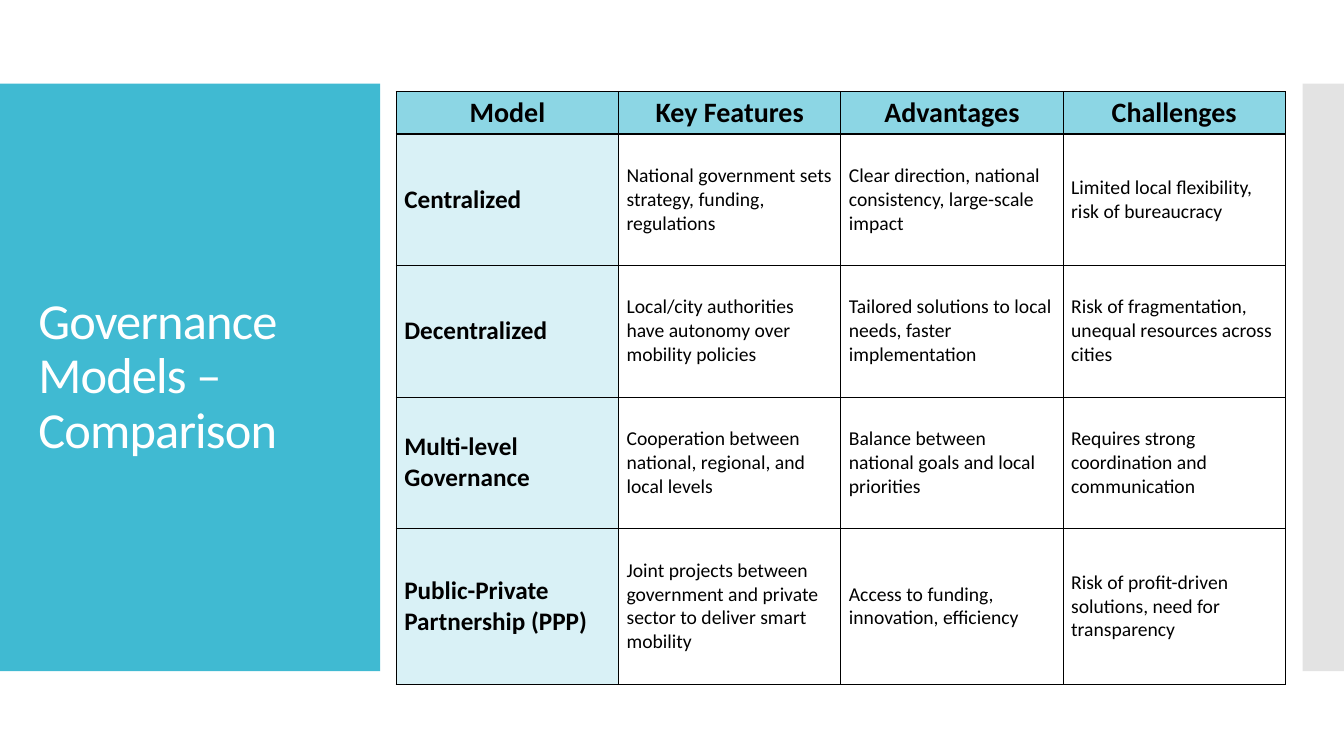
from lxml import etree
from pptx import Presentation
from pptx.dml.color import RGBColor
from pptx.enum.shapes import MSO_SHAPE
from pptx.enum.text import MSO_ANCHOR, MSO_AUTO_SIZE, PP_ALIGN
from pptx.oxml.ns import qn
from pptx.util import Inches, Pt

RECT = MSO_SHAPE.RECTANGLE
MIDDLE = MSO_ANCHOR.MIDDLE
NO_FIT = MSO_AUTO_SIZE.NONE
LEFT, CENTER = PP_ALIGN.LEFT, PP_ALIGN.CENTER

COLORS = {
    "panel": "40BAD2",
    "strip": "C8C8C8",
    "header": "8CD6E4",
    "model": "D9F1F6",
    "text": "000000",
    "border": "000000",
    "white": "FFFFFF",
}

HEADER = ["Model", "Key Features", "Advantages", "Challenges"]
MODELS = [
    ["Centralized",
     "National government sets strategy, funding, regulations",
     "Clear direction, national consistency, large-scale impact",
     "Limited local flexibility, risk of bureaucracy"],
    ["Decentralized",
     "Local/city authorities have autonomy over mobility policies",
     "Tailored solutions to local needs, faster implementation",
     "Risk of fragmentation, unequal resources across cities"],
    ["Multi-level Governance",
     "Cooperation between national, regional, and local levels",
     "Balance between national goals and local priorities",
     "Requires strong coordination and communication"],
    ["Public-Private Partnership (PPP)",
     "Joint projects between government and private sector to deliver smart mobility",
     "Access to funding, innovation, efficiency",
     "Risk of profit-driven solutions, need for transparency"],
]
ROW_HEIGHTS = [0.42, 1.3, 1.31, 1.3, 1.55]
TABLE_WIDTH = 8.82

# Cell looks: text size, weight, alignment and fill
HEADER_CELL = {"size": 20, "bold": True, "align": CENTER, "fill": "header"}
MODEL_CELL = {"size": 18, "bold": True, "align": LEFT, "fill": "model"}
BODY_CELL = {"size": 14, "bold": False, "align": LEFT, "fill": None}


def rgb(name):
    return RGBColor.from_string(COLORS[name])


def set_format(target, fmt):
    for key, value in fmt.items():
        setattr(target, key, value)


class SlideBuilder:
    def __init__(self, prs, font):
        self.font = font
        self.s = prs.slides.add_slide(prs.slide_layouts[5])

    def text(self, tf, text, size, color, align, bold=False):
        p = tf.paragraphs[0]
        p.alignment = align
        r = p.add_run()
        r.text = text
        set_format(r.font, {"name": self.font, "size": Pt(size), "bold": bold})
        r.font.color.rgb = rgb(color)
        return p, r

    def panel(self, box, color, alpha=None):
        sp = self.s.shapes.add_shape(RECT, *map(Inches, box))
        sp.shadow.inherit = False
        sp.line.fill.background()
        sp.fill.solid()
        sp.fill.fore_color.rgb = rgb(color)
        if alpha is not None:
            clr = sp.element.spPr.find(f"{qn('a:solidFill')}/{qn('a:srgbClr')}")
            etree.SubElement(clr, qn("a:alpha"), val=str(alpha * 1000))

    def title(self, box, text):
        sp = self.s.shapes.title
        # Bring the title in front of the panel
        sp.element.getparent().append(sp.element)
        sp.left, sp.top, sp.width, sp.height = map(Inches, box)
        tf = sp.text_frame
        set_format(tf, {"word_wrap": True, "auto_size": NO_FIT,
                        "vertical_anchor": MIDDLE})
        p, r = self.text(tf, text, 36, "white", LEFT)
        p.line_spacing = 0.9
        r._r.get_or_add_rPr().set("spc", "-60")

    def borders(self, cell):
        tcPr = cell._tc.get_or_add_tcPr()
        for side in ("a:lnL", "a:lnR", "a:lnT", "a:lnB"):
            ln = etree.SubElement(tcPr, qn(side), w=str(int(Pt(1))))
            fill = etree.SubElement(ln, qn("a:solidFill"))
            etree.SubElement(fill, qn("a:srgbClr"), val=COLORS["border"])

    def cell(self, cell, text, look):
        set_format(cell, {
            "vertical_anchor": MIDDLE,
            "margin_left": Inches(0.08), "margin_right": Inches(0.08),
            "margin_top": Inches(0.04), "margin_bottom": Inches(0.04),
        })
        self.borders(cell)
        if look["fill"]:
            cell.fill.solid()
            cell.fill.fore_color.rgb = rgb(look["fill"])
        else:
            cell.fill.background()
        self.text(cell.text_frame, text, look["size"], "text",
                  look["align"], look["bold"])

    def table(self, left, top, rows):
        box = (left, top, TABLE_WIDTH, sum(ROW_HEIGHTS))
        # Columns share the width equally
        table = self.s.shapes.add_table(
            len(rows), len(rows[0]), *map(Inches, box)).table
        for i, (texts, row_height) in enumerate(zip(rows, ROW_HEIGHTS)):
            table.rows[i].height = Inches(row_height)
            for j, text in enumerate(texts):
                look = HEADER_CELL if i == 0 else BODY_CELL if j else MODEL_CELL
                self.cell(table.cell(i, j), text, look)


def main():
    prs = Presentation()
    prs.slide_width, prs.slide_height = Inches(13.33), Inches(7.5)
    slide = SlideBuilder(prs, "Calibri")

    # Side panels
    slide.panel((0, 0.83, 3.77, 5.83), "panel")
    slide.panel((12.92, 0.83, 0.41, 5.83), "strip", alpha=50)

    # Title and comparison table
    slide.title((0.28, 1.23, 3.22, 5.03), "Governance Models – Comparison")
    slide.table(3.93, 0.91, [HEADER] + MODELS)

    prs.save("out.pptx")


if __name__ == "__main__":
    main()
